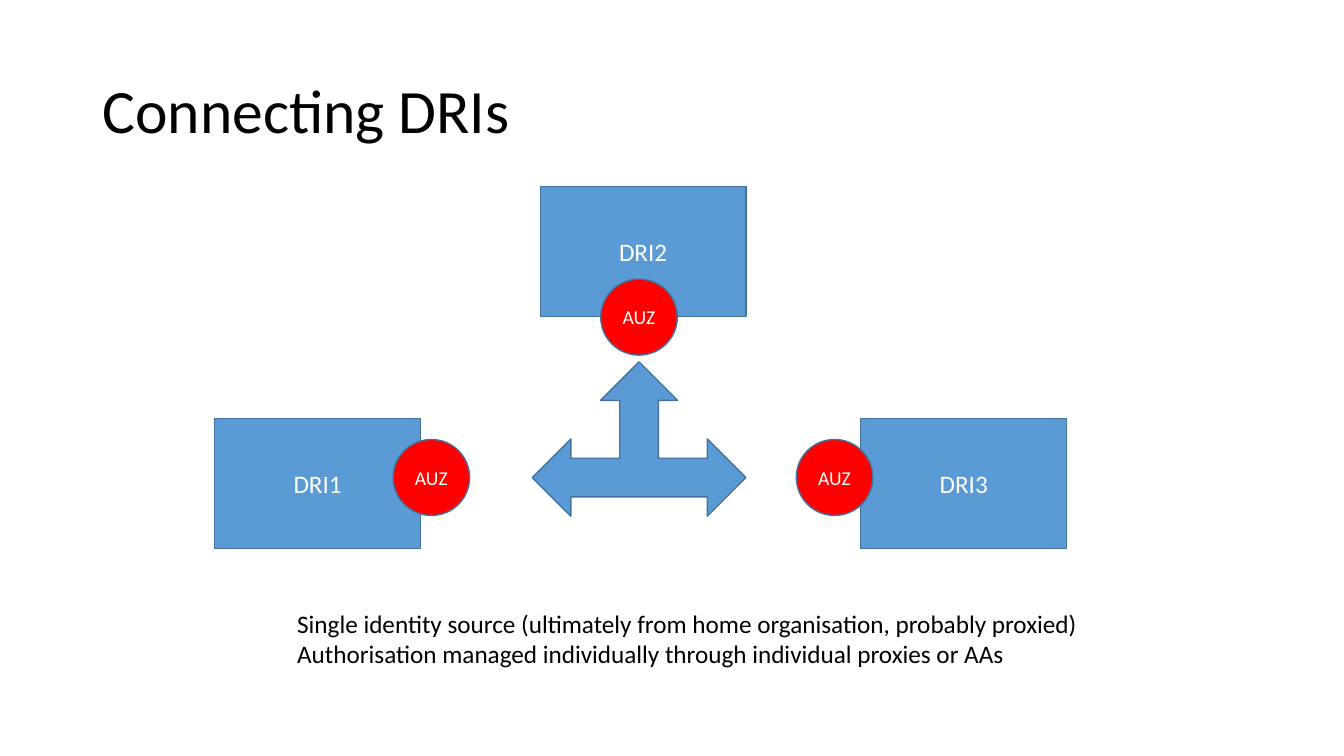
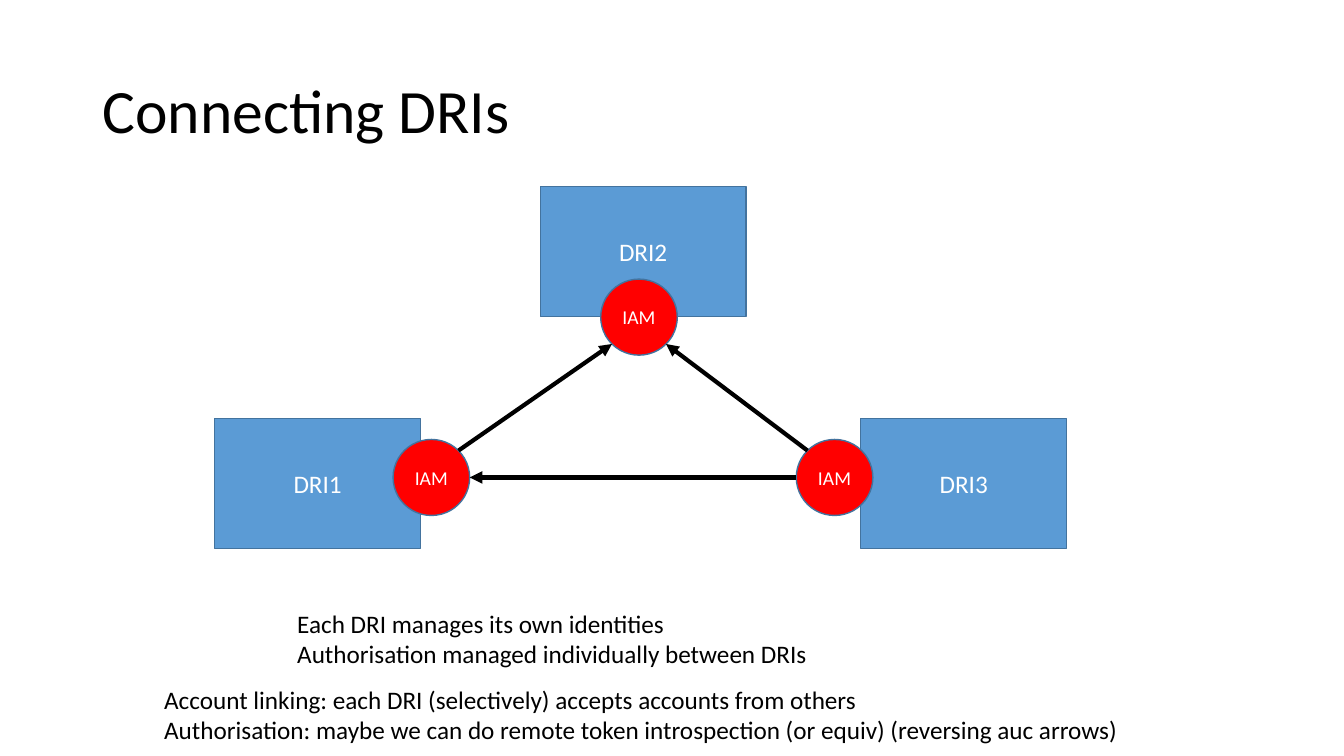
from math import cos, radians, sin

from lxml import etree
from pptx import Presentation
from pptx.dml.color import RGBColor
from pptx.enum.shapes import MSO_CONNECTOR, MSO_SHAPE
from pptx.enum.text import MSO_ANCHOR, MSO_AUTO_SIZE, PP_ALIGN
from pptx.oxml.ns import qn
from pptx.util import Pt

RECTANGLE, OVAL = MSO_SHAPE.RECTANGLE, MSO_SHAPE.OVAL
THREE_WAY_ARROW = MSO_SHAPE.LEFT_RIGHT_UP_ARROW
STRAIGHT = MSO_CONNECTOR.STRAIGHT
LEFT, CENTER = PP_ALIGN.LEFT, PP_ALIGN.CENTER
MIDDLE = MSO_ANCHOR.MIDDLE
NO_FIT = MSO_AUTO_SIZE.NONE

FONT = "Calibri"
BLUE, EDGE, RED = "5B9BD5", "43739E", "FF0000"
BLACK, WHITE = "000000", "FFFFFF"
TITLE_ONLY = 5

TITLE_BOX = (66, 28.8, 828, 104.4)
DIAGRAM_ORIGIN = (153.4, 133.2)
NODE_WIDTH, NODE_HEIGHT = 147, 93
BADGE_WIDTH, BADGE_HEIGHT = 54.7, 54.3
# Name: (node offset in the diagram, badge offset in the node)
NODES = {
    "DRI1": ((0, 165.6), (127.4, 15.1)),
    "DRI3": ((461.5, 165.6), (-46.1, 15.1)),
    "DRI2": ((232.5, 0), (43.2, 66.2)),
}
ARROW_BOX = (226.8, 125.3, 152.6, 110.2)
# From node, angle, to node, angle; clockwise degrees from the right
LINKS = [
    ("DRI1", -45, "DRI2", 135),
    ("DRI3", -135, "DRI2", 45),
    ("DRI3", 180, "DRI1", 0),
]


def rgb(color):
    return RGBColor.from_string(color)


def points(*lengths):
    return [Pt(length) for length in lengths]


def write(frame, lines, size, color, align=LEFT):
    for index, line in enumerate(lines):
        para = frame.add_paragraph() if index else frame.paragraphs[0]
        para.alignment = align
        span = para.add_run()
        span.text = line
        span.font.name = FONT
        span.font.size = Pt(size)
        span.font.color.rgb = rgb(color)


def add_titled_page(deck, title):
    page = deck.slides.add_slide(deck.slide_layouts[TITLE_ONLY])
    box = page.shapes.title
    box.left, box.top, box.width, box.height = points(*TITLE_BOX)
    frame = box.text_frame
    frame.auto_size = NO_FIT
    frame.vertical_anchor = MIDDLE
    write(frame, [title], 44, BLACK)
    frame.paragraphs[0].line_spacing = 0.9
    return page


def add_figure(page, kind, box, fill, label="", size=18):
    shape = page.shapes.add_shape(kind, *points(*box))
    shape.shadow.inherit = False
    shape.fill.solid()
    shape.fill.fore_color.rgb = rgb(fill)
    shape.line.color.rgb = rgb(EDGE)
    shape.line.width = Pt(1)
    if label:
        frame = shape.text_frame
        frame.word_wrap = False
        frame.vertical_anchor = MIDDLE
        write(frame, [label], size, WHITE, CENTER)


def add_nodes(page, origin, badge_label):
    """Draw the nodes and their badges; return the badge boxes by node."""
    badges = {}
    for name, (offset, badge_offset) in NODES.items():
        left, top = origin[0] + offset[0], origin[1] + offset[1]
        add_figure(page, RECTANGLE, (left, top, NODE_WIDTH, NODE_HEIGHT), BLUE, name)
        badges[name] = (left + badge_offset[0], top + badge_offset[1],
                        BADGE_WIDTH, BADGE_HEIGHT)
    for box in badges.values():
        add_figure(page, OVAL, box, RED, badge_label, 14)
    return badges


def rim_point(box, angle):
    left, top, width, height = box
    turn = radians(angle)
    return left + width / 2 * (1 + cos(turn)), top + height / 2 * (1 + sin(turn))


def add_links(page, badges):
    for source, source_angle, target, target_angle in LINKS:
        start = rim_point(badges[source], source_angle)
        end = rim_point(badges[target], target_angle)
        link = page.shapes.add_connector(STRAIGHT, *points(*start, *end))
        link.line.color.rgb = rgb(BLACK)
        link.line.width = Pt(3)
        etree.SubElement(link.line._get_or_add_ln(), qn("a:tailEnd"), type="triangle")
        etree.SubElement(link._element.spPr, qn("a:effectLst"))


def add_note(page, box, lines):
    frame = page.shapes.add_textbox(*points(*box)).text_frame
    frame.word_wrap = False
    write(frame, lines, 18, BLACK)


def add_shared_identity_page(deck):
    page = add_titled_page(deck, "Connecting DRIs")
    add_nodes(page, DIAGRAM_ORIGIN, "AUZ")
    left, top, width, height = ARROW_BOX
    arrow_box = (DIAGRAM_ORIGIN[0] + left, DIAGRAM_ORIGIN[1] + top, width, height)
    add_figure(page, THREE_WAY_ARROW, arrow_box, BLUE)
    add_note(page, (205.2, 430.6, 578.2, 51), [
        "Single identity source (ultimately from home organisation, probably proxied)",
        "Authorisation managed individually through individual proxies or AAs",
    ])


def add_own_identities_page(deck):
    page = add_titled_page(deck, "Connecting DRIs")
    badges = add_nodes(page, DIAGRAM_ORIGIN, "IAM")
    add_links(page, badges)
    add_note(page, (205.2, 430.6, 383, 51), [
        "Each DRI manages its own identities",
        "Authorisation managed individually between DRIs",
    ])
    add_note(page, (110.2, 485.3, 698.4, 51), [
        "Account linking: each DRI (selectively) accepts accounts from others",
        "Authorisation: maybe we can do remote token introspection (or equiv) "
        "(reversing auc arrows)",
    ])


def main():
    deck = Presentation()
    deck.slide_width, deck.slide_height = points(960, 540)
    add_shared_identity_page(deck)
    add_own_identities_page(deck)
    deck.save("out.pptx")


if __name__ == "__main__":
    main()
